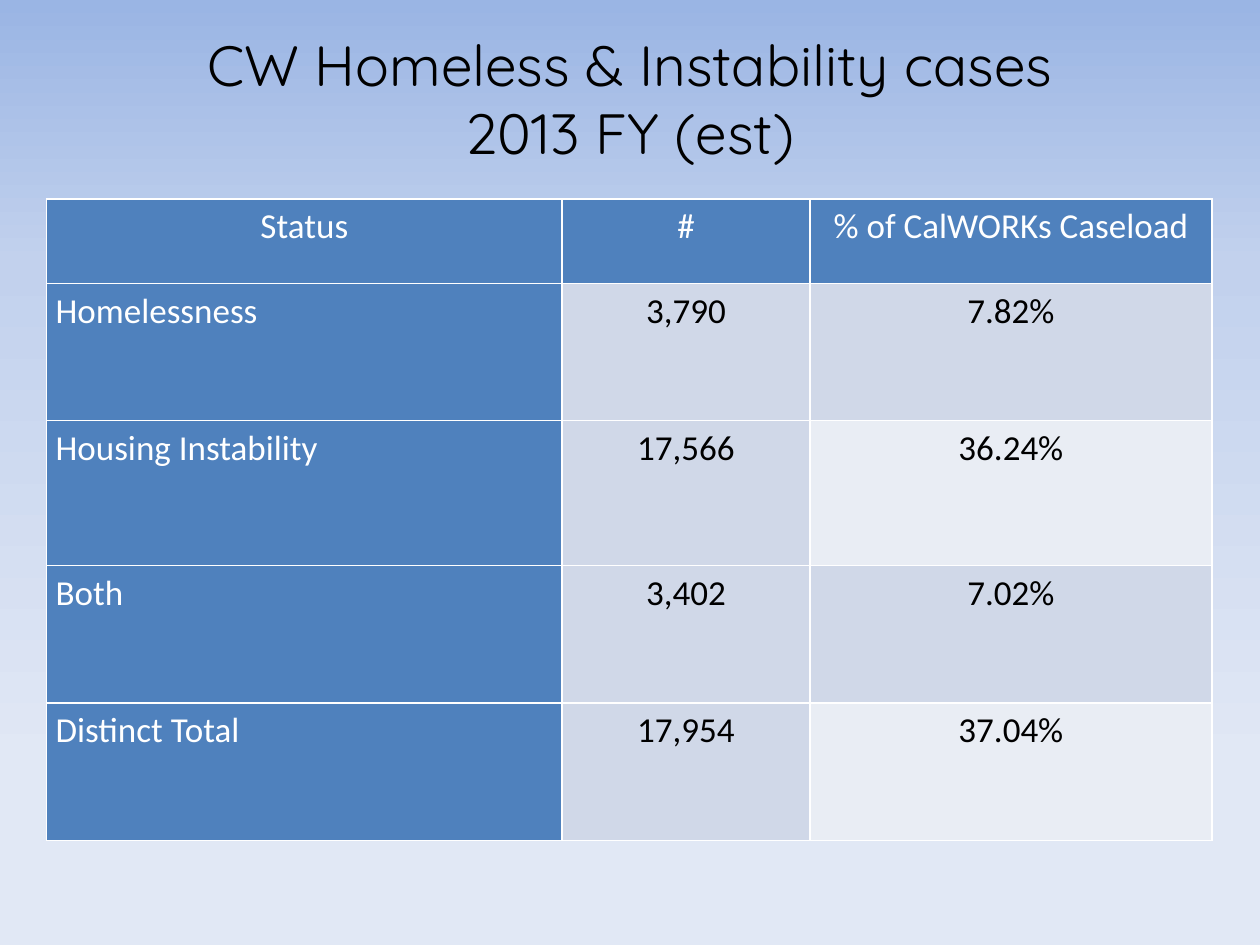
from copy import deepcopy
from dataclasses import dataclass

from lxml.etree import SubElement
from pptx import Presentation
from pptx.dml.color import RGBColor
from pptx.enum.text import MSO_ANCHOR as Anchor, PP_ALIGN as Align
from pptx.oxml.ns import qn
from pptx.util import Cm, Pt

COLORS = {
    "black": "000000",
    "white": "FFFFFF",
    "header": "4F81BD",
    "band_dark": "D0D8E8",
    "band_light": "E9EDF4",
}
BACKGROUND_STOPS = [(0, "9AB5E4"), (0.28, "C2D1ED"), (0.81, "E1E8F5")]
COLUMN_WIDTHS = [10.39, 5.0, 8.1]
HEADINGS = ["Status", "#", "% of CalWORKs Caseload"]
HEADING_HEIGHT = 1.7


@dataclass
class CaseRow:
    status: str
    count: str
    share: str
    height: float = 2.77


CASE_ROWS = [
    CaseRow("Homelessness", "3,790", "7.82%"),
    CaseRow("Housing Instability", "17,566", "36.24%", 2.92),
    CaseRow("Both", "3,402", "7.02%"),
    CaseRow("Distinct Total", "17,954", "37.04%"),
]


def rgb(name: str) -> RGBColor:
    return RGBColor.from_string(COLORS[name])


def paint_background(slide) -> None:
    fill = slide.background.fill
    fill.gradient()
    fill.gradient_angle = 270
    # A new gradient has two stops; add the third
    stop_list = next(slide.element.iter(qn("a:gsLst")))
    stop_list.append(deepcopy(stop_list[-1]))
    for stop, (position, color) in zip(fill.gradient_stops, BACKGROUND_STOPS):
        stop.position = position
        stop.color.rgb = RGBColor.from_string(color)


def style_paragraph(paragraph, size: float, font_name: str, color: str, align: Align) -> None:
    paragraph.alignment = align
    paragraph.font.size = Pt(size)
    paragraph.font.name = font_name
    paragraph.font.color.rgb = rgb(color)


def add_title(slide, text: str) -> None:
    shape = slide.shapes.add_textbox(Cm(1.27), Cm(0.76), Cm(22.86), Cm(2.41))
    frame = shape.text_frame
    frame.word_wrap = True
    frame.vertical_anchor = Anchor.MIDDLE
    paragraph = frame.paragraphs[0]
    paragraph.text = text
    style_paragraph(paragraph, 32.4, "Quicksand", "black", Align.CENTER)


def add_borders(cell) -> None:
    properties = cell._tc.get_or_add_tcPr()
    for index, side in enumerate(("lnL", "lnR", "lnT", "lnB")):
        line = properties.makeelement(qn(f"a:{side}"), {"w": str(Pt(1))})
        solid = SubElement(line, qn("a:solidFill"))
        SubElement(solid, qn("a:srgbClr"), val=COLORS["white"])
        properties.insert(index, line)


def fill_cell(cell, text: str, fill: str, color: str, align: Align) -> None:
    cell.fill.solid()
    cell.fill.fore_color.rgb = rgb(fill)
    cell.margin_left = cell.margin_right = Cm(0.18)
    cell.margin_top = cell.margin_bottom = 0
    paragraph = cell.text_frame.paragraphs[0]
    paragraph.text = text
    paragraph.line_spacing = 1.15
    style_paragraph(paragraph, 20, "Calibri", color, align)
    add_borders(cell)


def add_case_table(slide) -> None:
    heights = [HEADING_HEIGHT] + [row.height for row in CASE_ROWS]
    table = slide.shapes.add_table(
        len(heights), len(COLUMN_WIDTHS), Cm(0.94), Cm(4.01),
        Cm(sum(COLUMN_WIDTHS)), Cm(sum(heights)),
    ).table
    table.first_row = table.horz_banding = False
    for column, width in zip(table.columns, COLUMN_WIDTHS):
        column.width = Cm(width)
    for row, height in zip(table.rows, heights):
        row.height = Cm(height)

    # Heading row
    for index, heading in enumerate(HEADINGS):
        fill_cell(table.cell(0, index), heading, "header", "white", Align.CENTER)

    # Case rows, with banding in the share column only
    for index, case in enumerate(CASE_ROWS, start=1):
        band = "band_dark" if index % 2 else "band_light"
        fill_cell(table.cell(index, 0), case.status, "header", "white", Align.LEFT)
        fill_cell(table.cell(index, 1), case.count, "band_dark", "black", Align.CENTER)
        fill_cell(table.cell(index, 2), case.share, band, "black", Align.CENTER)


def main() -> None:
    presentation = Presentation()
    presentation.slide_width, presentation.slide_height = Cm(25.4), Cm(19.05)
    slide = presentation.slides.add_slide(presentation.slide_layouts[6])
    paint_background(slide)
    add_title(slide, "CW Homeless & Instability cases\v2013 FY (est)")
    add_case_table(slide)
    presentation.save("out.pptx")


if __name__ == "__main__":
    main()
